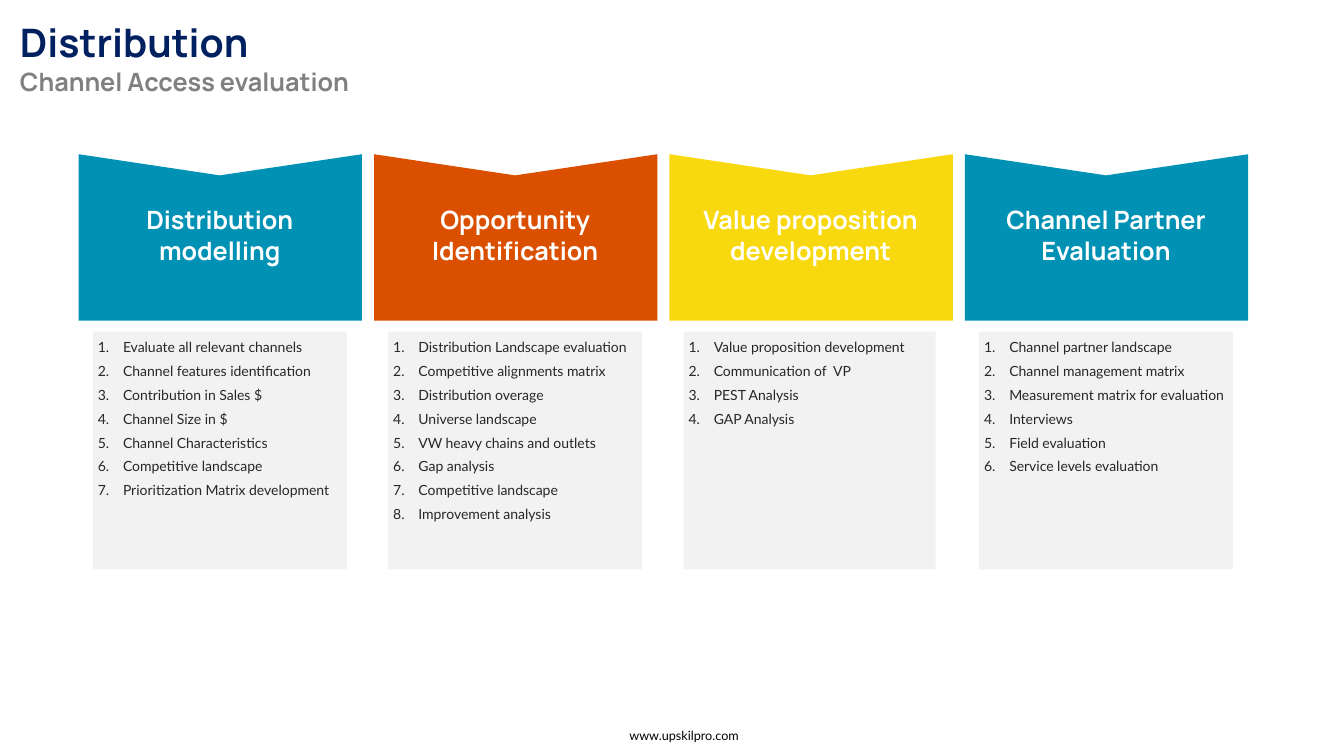
from lxml import etree
from pptx import Presentation
from pptx import util as u
from pptx.dml.color import RGBColor
from pptx.enum import shapes, text
from pptx.oxml.ns import qn

NAVY = RGBColor(0x00, 0x20, 0x60)
GREY = RGBColor(0x80, 0x80, 0x80)
TEAL = RGBColor(0x00, 0x91, 0xB5)
ORANGE = RGBColor(0xDB, 0x50, 0x00)
YELLOW = RGBColor(0xF8, 0xD9, 0x0F)
PANEL = RGBColor(0xF2, 0xF2, 0xF2)
INK = RGBColor(0x27, 0x27, 0x27)
WHITE = RGBColor(0xFF, 0xFF, 0xFF)
BLACK = RGBColor(0x00, 0x00, 0x00)

TITLE = {"name": "Manrope", "size": u.Pt(28), "bold": True, "color": NAVY}
SUBTITLE = {**TITLE, "size": u.Pt(18), "color": GREY}
HEADING = {**SUBTITLE, "color": WHITE}
ITEM = {"name": "Lato", "size": u.Pt(10), "bold": False, "color": INK}
FOOTER = {**ITEM, "size": u.Pt(9), "color": BLACK}

COLUMNS = [
    (TEAL, "Distribution modelling", 2.52, [
        "Evaluate all relevant channels", "Channel features identification",
        "Contribution in Sales $", "Channel Size in $", "Channel Characteristics",
        "Competitive landscape", "Prioritization Matrix development"]),
    (ORANGE, "Opportunity Identification", 2.52, [
        "Distribution Landscape evaluation", "Competitive alignments matrix",
        "Distribution overage", "Universe landscape", "VW heavy chains and outlets",
        "Gap analysis", "Competitive landscape", "Improvement analysis"]),
    (YELLOW, "Value proposition development", 2.5, [
        "Value proposition development", "Communication of  VP",
        "PEST Analysis", "GAP Analysis"]),
    (TEAL, "Channel Partner\nEvaluation", 2.52, [
        "Channel partner landscape", "Channel management matrix",
        "Measurement matrix for evaluation", "Interviews", "Field evaluation",
        "Service levels evaluation"]),
]
PITCH = 2.93
BANNER = [(0, 1.65), (2.81, 1.65), (2.81, 0), (1.4, 0.21), (0, 0)]


def write_lines(box, lines, align, space=0, numbered=False):
    frame = box.text_frame
    frame.word_wrap = True
    for index, (words, style) in enumerate(lines):
        para = frame.paragraphs[0] if index == 0 else frame.add_paragraph()
        para.alignment = align
        if index:
            para.space_before = u.Pt(space)
        if numbered:
            para.line_spacing = u.Pt(15)
            props = para._p.get_or_add_pPr()
            props.set("marL", str(u.Inches(0.25)))
            props.set("indent", str(u.Inches(-0.25)))
            etree.SubElement(props, qn("a:buFont"), typeface="+mj-lt")
            etree.SubElement(props, qn("a:buAutoNum"), type="arabicPeriod")
        span = para.add_run()
        span.text = words
        for key, value in style.items():
            if key == "color":
                span.font.color.rgb = value
            else:
                setattr(span.font, key, value)


def paint(shape, color):
    shape.shadow.inherit = False
    shape.fill.solid()
    shape.fill.fore_color.rgb = color
    shape.line.fill.background()


deck = Presentation()
deck.slide_width, deck.slide_height = u.Inches(13.33), u.Inches(7.5)
page = deck.slides.add_slide(deck.slide_layouts[6])

for number, (color, heading, width, items) in enumerate(COLUMNS):
    left = 0.78 + number * PITCH
    points = [(u.Inches(left + x), u.Inches(1.53 + y)) for x, y in BANNER]
    outline = page.shapes.build_freeform(*points[0])
    outline.add_line_segments(points[1:], close=True)
    paint(outline.convert_to_shape(), color)

    panel = page.shapes.add_shape(
        shapes.MSO_SHAPE.RECTANGLE, u.Inches(left + 0.14), u.Inches(3.29),
        u.Inches(width), u.Inches(2.36))
    paint(panel, PANEL)
    margins = {"margin_left": 0.05, "margin_right": 0.05,
               "margin_top": 0.03, "margin_bottom": 0.03}
    for key, value in margins.items():
        setattr(panel.text_frame, key, u.Inches(value))
    panel.text_frame.vertical_anchor = text.MSO_ANCHOR.TOP
    write_lines(panel, [(item, ITEM) for item in items],
                text.PP_ALIGN.JUSTIFY, space=2, numbered=True)

    label = page.shapes.add_textbox(
        u.Inches(left + 0.14), u.Inches(1.67), u.Inches(2.52), u.Inches(1.01))
    label.text_frame.vertical_anchor = text.MSO_ANCHOR.BOTTOM
    write_lines(label, [(line, HEADING) for line in heading.split("\n")],
                text.PP_ALIGN.CENTER)

title = page.shapes.add_textbox(
    u.Inches(0.1), u.Inches(0.07), u.Inches(4.43), u.Inches(0.94))
title.text_frame.margin_top = u.Inches(0.11)
write_lines(title, [("Distribution", TITLE), ("Channel Access evaluation", SUBTITLE)],
            text.PP_ALIGN.LEFT, space=1)

footer = page.shapes.add_textbox(
    u.Inches(5.22), u.Inches(7.17), u.Inches(3.13), u.Inches(0.25))
write_lines(footer, [("www.upskilpro.com", FOOTER)], text.PP_ALIGN.CENTER)

deck.save("out.pptx")
